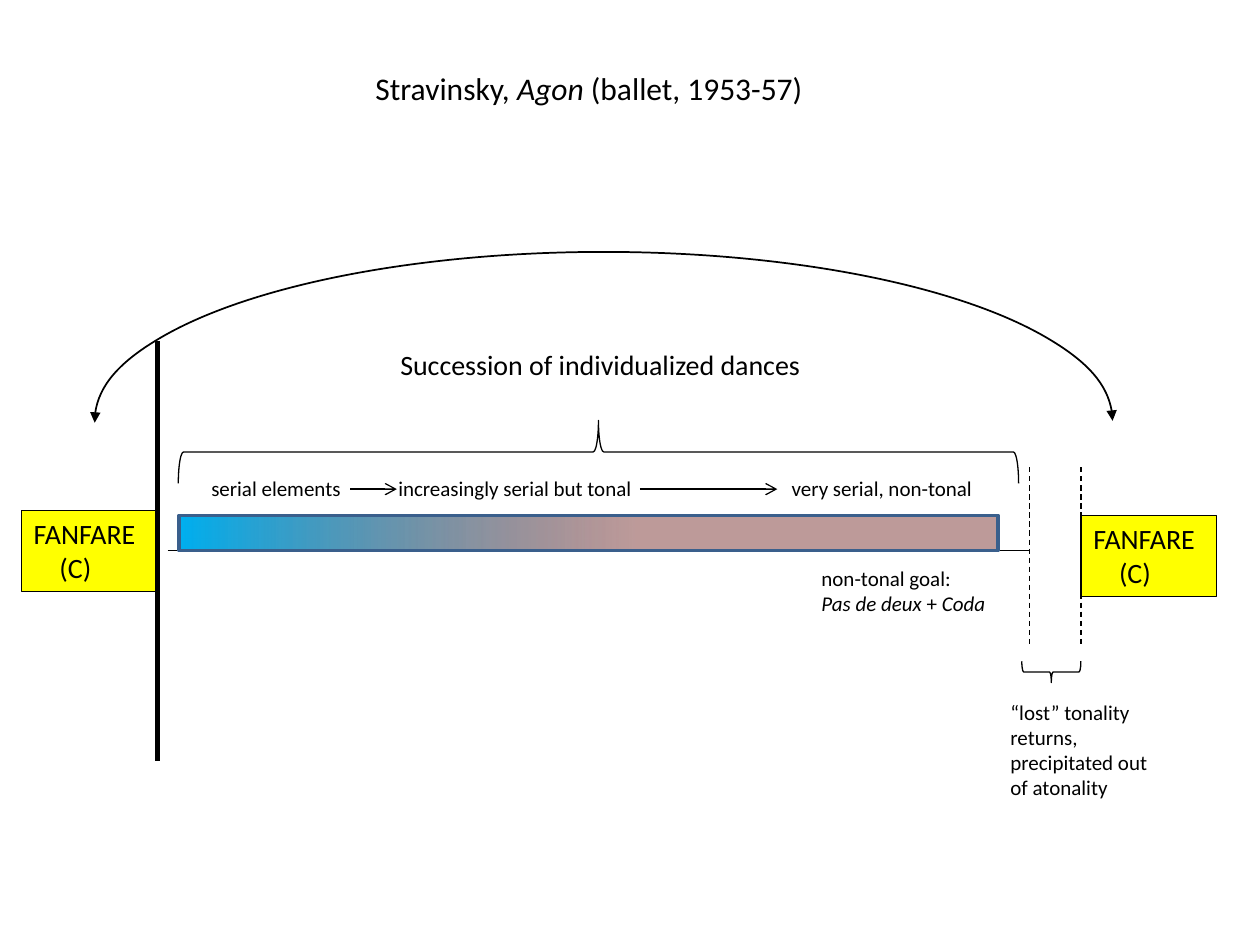
import pptx
import pptx.util
import pptx.dml.color
import pptx.enum.dml
import pptx.enum.shapes
import pptx.enum.text
import pptx.oxml.ns
import lxml.etree

Cm = pptx.util.Cm
Pt = pptx.util.Pt
qn = pptx.oxml.ns.qn
KIND = pptx.enum.shapes.MSO_SHAPE
DASH = pptx.enum.dml.MSO_LINE.DASH


def tint(code):
    return pptx.dml.color.RGBColor.from_string(code)


def put(item, values):
    for name, value in values.items():
        setattr(item, name, value)


def add(node, tag, **values):
    return lxml.etree.SubElement(node, qn(tag), values)


class Board:
    font = "Calibri"
    ink = "000000"

    def __init__(self, slide):
        self.slide = slide

    def label(self, shape, rows, size, tabs=(), inset=0):
        frame = shape.text_frame
        put(frame, {
            "word_wrap": True,
            "auto_size": pptx.enum.text.MSO_AUTO_SIZE.SHAPE_TO_FIT_TEXT,
            "vertical_anchor": pptx.enum.text.MSO_ANCHOR.TOP,
        })
        for i, row in enumerate(rows):
            para = frame.add_paragraph() if i else frame.paragraphs[0]
            para.alignment = pptx.enum.text.PP_ALIGN.LEFT
            props = para._p.get_or_add_pPr()
            if i and inset:
                props.set("marL", str(Cm(inset)))
            if tabs:
                stops = add(props, "a:tabLst")
                for tab in tabs:
                    add(stops, "a:tab", pos=str(Cm(tab)), algn="l")
            for j, part in enumerate(row.split("*")):
                if part:
                    run = para.add_run()
                    run.text = part
                    put(run.font, {"name": self.font, "size": Pt(size),
                                   "italic": j % 2 == 1})
                    run.font.color.rgb = tint(self.ink)

    def text(self, box, rows, size, tabs=()):
        shape = self.slide.shapes.add_textbox(*map(Cm, box))
        self.label(shape, rows, size, tabs)

    def stroke(self, item, width, code=ink, dash=None, **ends):
        item.line.color.rgb = tint(code)
        put(item.line, {"width": Pt(width), "dash_style": dash})
        edge = item._element.spPr.find(qn("a:ln"))
        for end, style in ends.items():
            add(edge, f"a:{end}End", type=style)

    def line(self, start, stop, width=0.75, **look):
        straight = pptx.enum.shapes.MSO_CONNECTOR.STRAIGHT
        item = self.slide.shapes.add_connector(straight, *map(Cm, start + stop))
        self.stroke(item, width, **look)
        add(item._element.spPr, "a:effectLst")

    def shape(self, kind, box, fill=None, width=0.75, turn=0, **look):
        item = self.slide.shapes.add_shape(kind, *map(Cm, box))
        item.rotation = turn
        if fill:
            item.fill.solid()
            item.fill.fore_color.rgb = tint(fill)
        else:
            item.fill.background()
        self.stroke(item, width, **look)
        item.shadow.inherit = False
        return item

    def fade(self, item, stops, angle):
        item.fill.gradient()
        item.fill.gradient_angle = angle
        for stop, (place, code, alpha) in zip(item.fill.gradient_stops, stops):
            stop.position = place
            stop.color.rgb = tint(code)
        nodes = item._element.spPr.iter(qn("a:gs"))
        for node, (place, code, alpha) in zip(nodes, stops):
            add(node[0], "a:alpha", val=str(alpha * 1000))

    def fanfare(self, left, top):
        item = self.shape(KIND.RECTANGLE, (left, top, 2.74, 1.63), "FFFF00")
        self.label(item, ["FANFARE", "(C)"], 16, inset=0.52)


def main():
    deck = pptx.Presentation()
    put(deck, {"slide_width": Cm(25.4), "slide_height": Cm(19.05)})
    board = Board(deck.slides.add_slide(deck.slide_layouts[6]))

    board.fanfare(0.43, 10.29)
    board.line((3.38, 11.1), (20.75, 11.1))
    board.fanfare(21.79, 10.39)
    board.line((3.18, 6.88), (3.18, 15.34), 3)
    board.text((4.01, 9.47, 16.08, 0.76),
               ["serial elements\tincreasingly serial but tonal\tvery serial, non-tonal"],
               12, tabs=(3.77, 11.7))
    board.text((16.31, 11.28, 4.24, 1.27),
               ["non-tonal goal:", "*Pas de deux *+ *Coda*"], 12)
    for x in (20.75, 21.79):
        board.line((x, 9.42), (x, 13), dash=DASH)
    board.text((20.12, 13.97, 3.38, 2.31),
               ["“lost” tonality", "returns, precipitated out of atonality"], 12)
    board.text((7.32, 1.27, 9.73, 1.02),
               ["Stravinsky, *Agon* (ballet, 1953-57)"], 18)
    board.shape(KIND.RIGHT_BRACE, (11.43, 0.64, 1.27, 16.94), turn=270)
    board.text((7.82, 6.88, 8.69, 0.94),
               ["Succession of individualized dances"], 16)
    bar = board.shape(KIND.RECTANGLE, (3.61, 10.39, 16.51, 0.71),
                      width=2, code="3A5F8C")
    board.fade(bar, [(0.44, "772B29", 47), (1, "00B0F0", 100)], 180)
    for left, right in ((7.06, 8), (12.9, 15.67)):
        board.line((left, 9.86), (right, 9.86), tail="arrow")
    board.shape(KIND.LEFT_BRACE, (20.98, 12.95, 0.43, 1.19), turn=270)
    arc = board.shape(KIND.ARC, (1.91, 5.08, 20.52, 6.81), width=1,
                      head="triangle", tail="triangle")
    arc.adjustments[0] = 107.87
    arc.adjustments[1] = 0

    deck.save("out.pptx")


if __name__ == "__main__":
    main()
